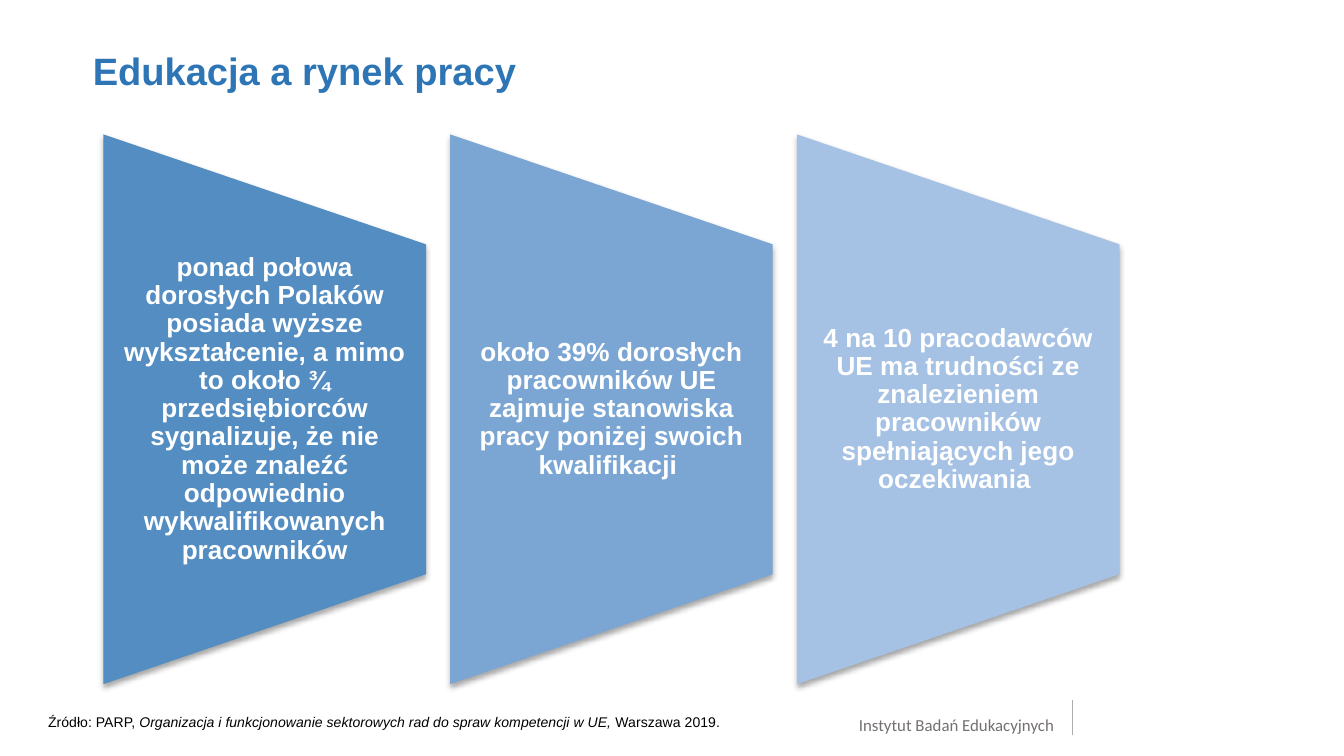
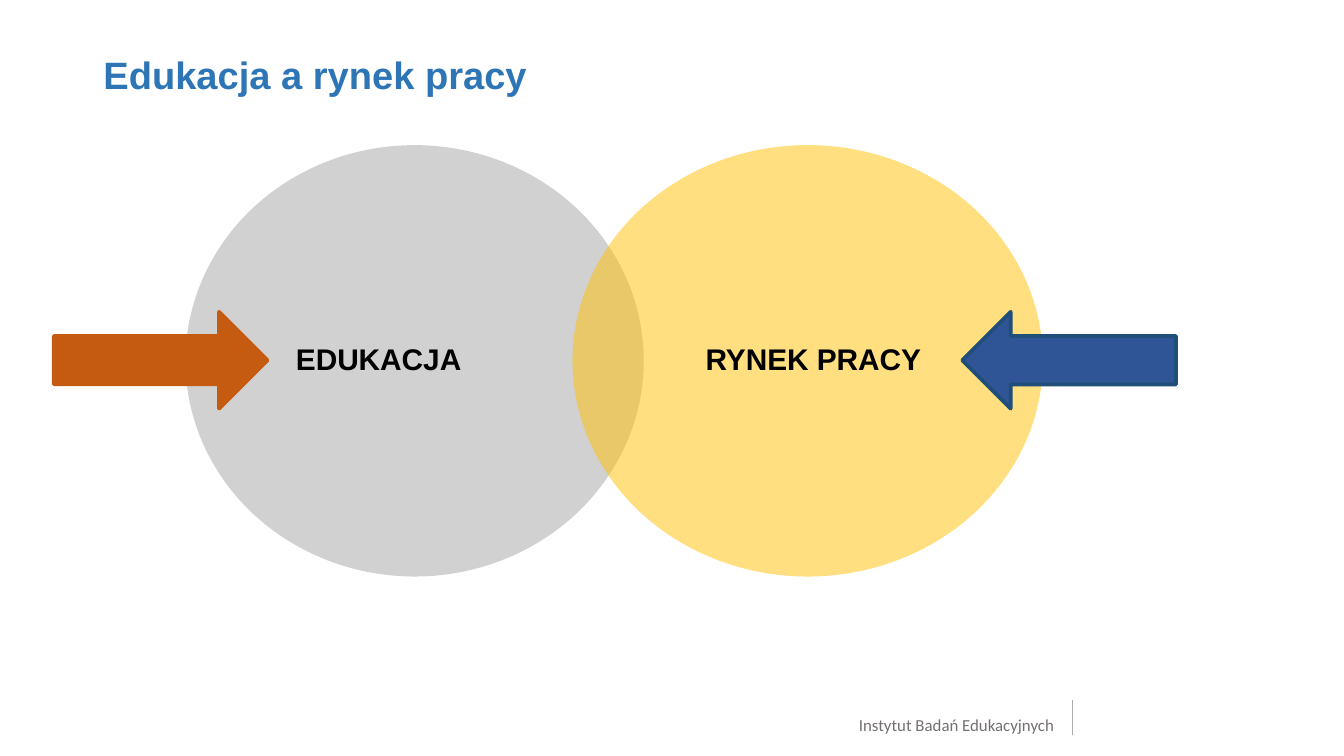
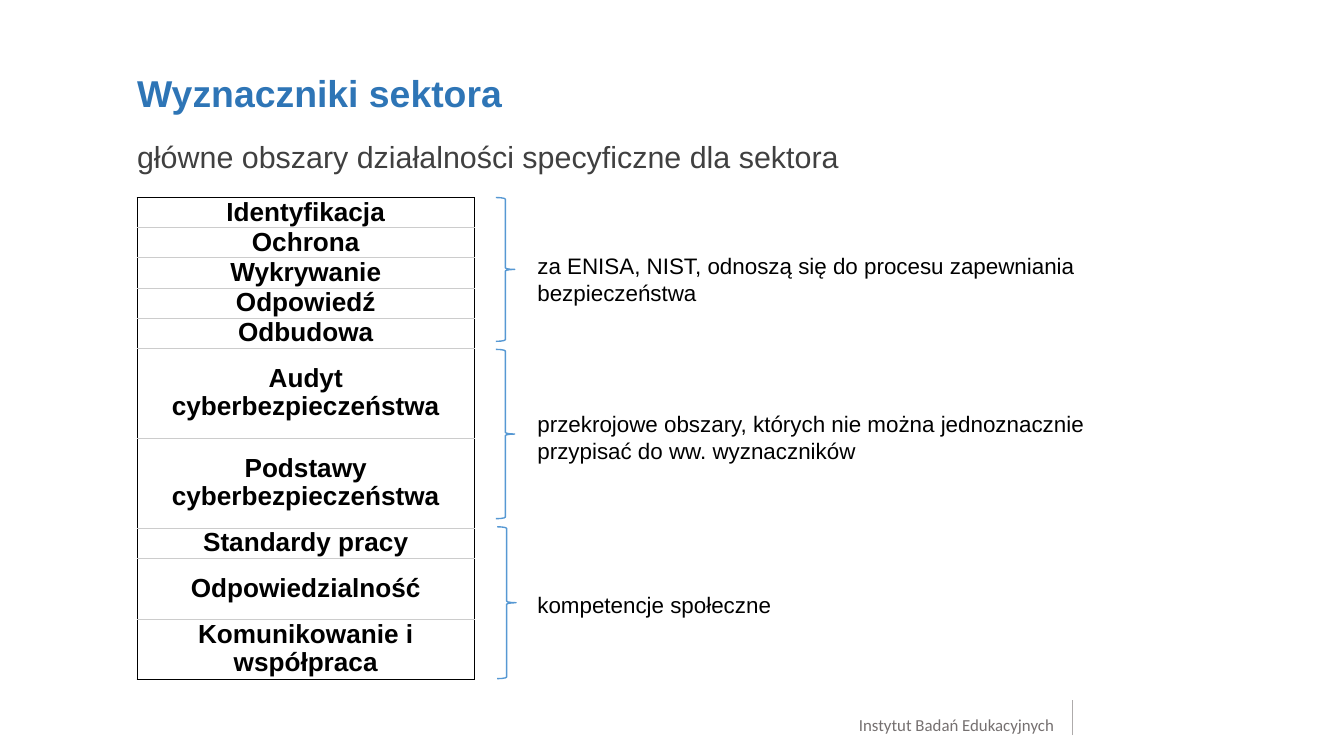
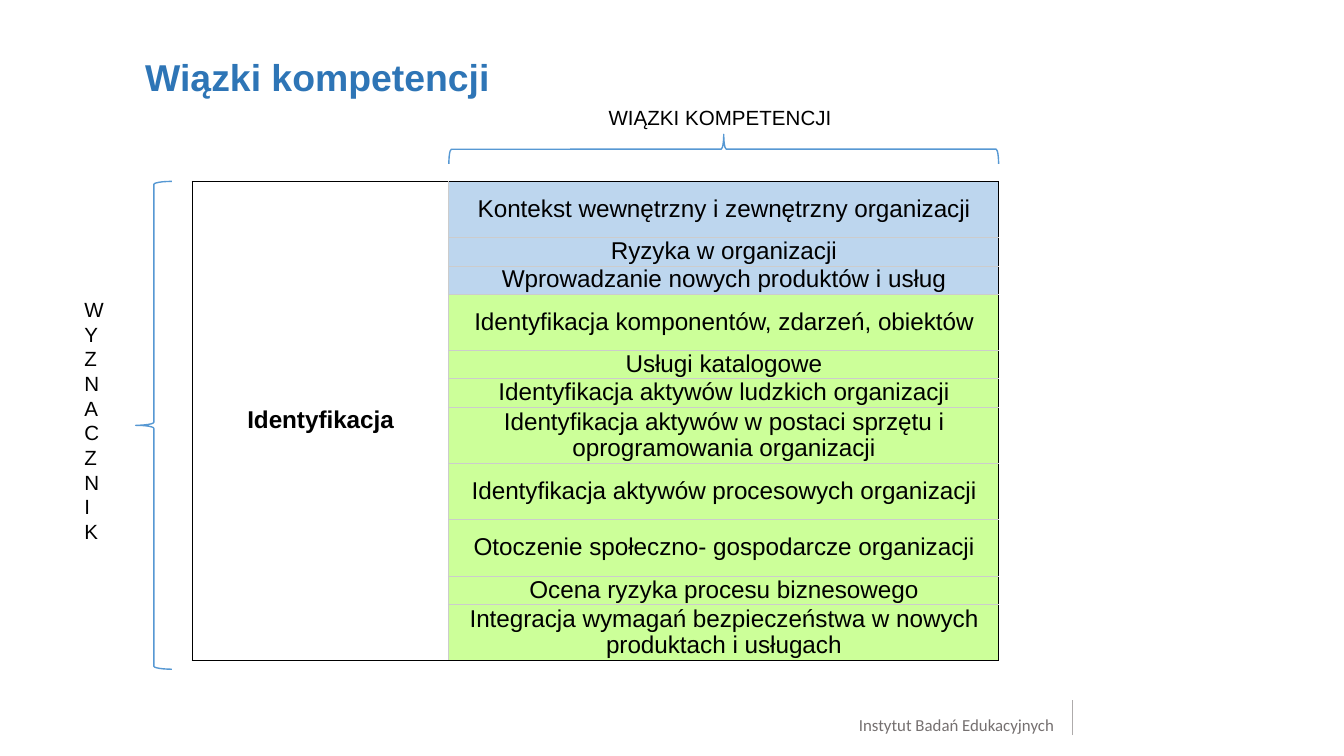
from dataclasses import dataclass

from lxml import etree
from pptx import Presentation
from pptx.dml.color import RGBColor
from pptx.enum.shapes import MSO_CONNECTOR, MSO_SHAPE
from pptx.enum.text import MSO_ANCHOR, PP_ALIGN
from pptx.oxml.ns import qn
from pptx.util import Inches, Pt


@dataclass(frozen=True)
class Theme:
    font: str = "Arial"
    footer_font: str = "Calibri"
    title: str = "2E75B6"
    subtitle: str = "404040"
    text: str = "000000"
    inverse: str = "FFFFFF"
    footer: str = "757070"
    footer_rule: str = "AEABAB"
    brace: str = "5698D3"
    grid: str = "CCCCCC"
    frame: str = "000000"
    panels: tuple = ("538DC1", "7BA6D3", "A5C1E3")
    education: str = "A5A5A5"
    labour: str = "FFC000"
    arrow_in: str = "C55A11"
    arrow_back: str = "2F5597"
    arrow_back_edge: str = "1F4E79"
    context_cell: str = "BDD6EE"
    asset_cell: str = "CCFF99"
    large_title: float = 20.4
    title_size: float = 20
    subtitle_size: float = 16.3
    circle_size: float = 16
    strong_size: float = 14
    cell_size: float = 13
    note_size: float = 12
    label_size: float = 11
    footer_size: float = 9
    source_size: float = 7.5


THEME = Theme()
NO_MARGINS = (0, 0, 0, 0)
TEXT_MARGINS = (0.1, 0.05, 0.1, 0.05)


def color(value):
    return RGBColor.from_string(value)


def add_element(parent, tag, **attributes):
    element = etree.SubElement(parent, qn(tag))
    for name, value in attributes.items():
        element.set(name, str(value))
    return element


# ---- Shared building blocks ----
def write_text(frame, content, size=THEME.note_size, fill=THEME.text, bold=False,
               font=THEME.font, align=PP_ALIGN.LEFT, spacing=1.0):
    """Write a string, or a list of (text, italic) runs, as one paragraph."""
    paragraph = frame.paragraphs[0]
    paragraph.alignment = align
    paragraph.line_spacing = spacing
    runs = [(content, False)] if isinstance(content, str) else content
    for text, italic in runs:
        run = paragraph.add_run()
        run.text = text
        run.font.name = font
        run.font.size = Pt(size)
        run.font.bold = bold
        run.font.italic = italic
        run.font.color.rgb = color(fill)


def add_text(slide, box, content, margins=TEXT_MARGINS, anchor=MSO_ANCHOR.TOP, **text_format):
    frame = slide.shapes.add_textbox(*map(Inches, box)).text_frame
    frame.word_wrap = True
    frame.vertical_anchor = anchor
    (frame.margin_left, frame.margin_top,
     frame.margin_right, frame.margin_bottom) = map(Inches, margins)
    write_text(frame, content, **text_format)
    return frame


def add_figure(slide, kind, box, fill=None, line=None, line_width=0.75, rotation=0):
    """Add a preset shape; box is the area covered after rotation."""
    left, top, width, height = box
    if rotation in (90, 270):
        left, top = left + (width - height) / 2, top + (height - width) / 2
        width, height = height, width
    shape = slide.shapes.add_shape(kind, *map(Inches, (left, top, width, height)))
    shape.rotation = rotation
    shape.shadow.inherit = False
    if fill:
        shape.fill.solid()
        shape.fill.fore_color.rgb = color(fill)
    else:
        shape.fill.background()
    if line:
        shape.line.color.rgb = color(line)
        shape.line.width = Pt(line_width)
    else:
        shape.line.fill.background()
    return shape


def add_drop_shadow(shape):
    effects = shape._element.spPr.find(qn("a:effectLst"))
    shadow = add_element(effects, "a:outerShdw", blurRad=Pt(3.1), dist=Pt(1.8),
                         dir=90 * 60000, rotWithShape=0)
    add_element(add_element(shadow, "a:srgbClr", val="000000"), "a:alpha", val=35000)


def make_translucent(shape, percent):
    solid = shape._element.spPr.find(qn("a:solidFill"))
    add_element(solid[0], "a:alpha", val=percent * 1000)


def add_title(slide, left, top, text, size=THEME.title_size, width=8.62):
    add_text(slide, (left, top, width, 0.58), text, margins=NO_MARGINS,
             size=size, fill=THEME.title, bold=True)


def add_footer(slide):
    add_text(slide, (6.17, 5.32, 1.67, 0.14), "Instytut Badań Edukacyjnych",
             margins=NO_MARGINS, size=THEME.footer_size, fill=THEME.footer,
             font=THEME.footer_font, align=PP_ALIGN.RIGHT)
    rule = slide.shapes.add_connector(
        MSO_CONNECTOR.STRAIGHT, *map(Inches, (7.98, 5.47, 7.98, 5.21)))
    rule.line.color.rgb = color(THEME.footer_rule)
    rule.line.width = Pt(0.75)
    add_element(rule._element.spPr, "a:effectLst")


def new_slide(presentation):
    slide = presentation.slides.add_slide(presentation.slide_layouts[6])
    add_footer(slide)
    return slide


# ---- Tables: dark outer frame, light inner grid ----
def add_grid(slide, left, top, column_widths, row_heights):
    rows, columns = len(row_heights), len(column_widths)
    box = (left, top, sum(column_widths), sum(row_heights))
    table = slide.shapes.add_table(rows, columns, *map(Inches, box)).table
    table.first_row = table.horz_banding = False
    for column, width in zip(table.columns, column_widths):
        column.width = Inches(width)
    for row, height in zip(table.rows, row_heights):
        row.height = Inches(height)
    return table


def border_cell(cell, left, right, top, bottom):
    properties = cell._tc.get_or_add_tcPr()
    sides = {"a:lnL": left, "a:lnR": right, "a:lnT": top, "a:lnB": bottom}
    for tag, is_outer in sides.items():
        line = add_element(properties, tag, w=Pt(0.6))
        add_element(add_element(line, "a:solidFill"), "a:srgbClr",
                    val=THEME.frame if is_outer else THEME.grid)


def finish_grid(table):
    rows, columns = len(table.rows), len(table.columns)
    for row in range(rows):
        for column in range(columns):
            cell = table.cell(row, column)
            last_row = row + (cell.span_height if cell.is_merge_origin else 1)
            border_cell(cell, column == 0, column == columns - 1,
                        row == 0, last_row == rows)
            cell.fill.background()


def write_cell(cell, text, fill=None, **text_format):
    cell.margin_left = cell.margin_right = Inches(0.02)
    cell.margin_top = cell.margin_bottom = 0
    cell.vertical_anchor = MSO_ANCHOR.MIDDLE
    if fill:
        cell.fill.solid()
        cell.fill.fore_color.rgb = color(fill)
    write_text(cell.text_frame, text, align=PP_ALIGN.CENTER, spacing=0.96, **text_format)


# ---- Slide 1: three fact panels ----
def add_fact_panel(slide, box, fill, text):
    left, top, width, height = box
    panel = add_figure(slide, MSO_SHAPE.FLOWCHART_MANUAL_OPERATION, box,
                       fill=fill, rotation=270)
    add_drop_shadow(panel)
    add_text(slide, (left, top + height * 0.2, width, height * 0.6), text,
             margins=(0.1, 0, 0.1, 0), anchor=MSO_ANCHOR.MIDDLE, bold=True,
             size=THEME.strong_size, fill=THEME.inverse,
             align=PP_ALIGN.CENTER, spacing=0.9)


def build_facts(presentation):
    slide = new_slide(presentation)
    add_title(slide, 0.69, 0.35, "Edukacja a rynek pracy", THEME.large_title)
    facts = (
        "ponad połowa dorosłych Polaków posiada wyższe wykształcenie, a mimo to około ¾ "
        "przedsiębiorców sygnalizuje, że nie może znaleźć odpowiednio "
        "wykwalifikowanych pracowników",
        "około 39% dorosłych pracowników UE zajmuje stanowiska pracy poniżej "
        "swoich kwalifikacji ",
        "4 na 10 pracodawców UE ma trudności ze znalezieniem pracowników "
        "spełniających jego oczekiwania ",
    )
    for index, (fill, fact) in enumerate(zip(THEME.panels, facts)):
        add_fact_panel(slide, (0.77 + 2.58 * index, 1, 2.4, 4.09), fill, fact)
    source = [
        ("Źródło: PARP, ", False),
        ("Organizacja i funkcjonowanie sektorowych rad do spraw kompetencji w UE, ", True),
        ("Warszawa 2019.", False),
    ]
    add_text(slide, (0.26, 5.26, 7.17, 0.23), source, size=THEME.source_size)


# ---- Slide 2: overlapping circles with arrows ----
def add_circle(slide, box, fill, label, label_left, label_width, align):
    left, top, width, height = box
    make_translucent(add_figure(slide, MSO_SHAPE.OVAL, box, fill=fill), 50)
    add_text(slide, (left + label_left, top + 0.38, label_width, height - 0.76), label,
             margins=NO_MARGINS, anchor=MSO_ANCHOR.MIDDLE, size=THEME.circle_size,
             bold=True, align=align, spacing=0.9)


def build_overlap(presentation):
    slide = new_slide(presentation)
    add_title(slide, 0.77, 0.38, "Edukacja a rynek pracy", THEME.large_title, width=6.86)
    add_circle(slide, (1.38, 1.08, 3.41, 3.21), THEME.education, "EDUKACJA ",
               0.48, 1.97, PP_ALIGN.CENTER)
    add_circle(slide, (4.26, 1.08, 3.5, 3.21), THEME.labour, "RYNEK PRACY",
               0.99, 2.02, PP_ALIGN.LEFT)
    arrows = ((0.4, THEME.arrow_in, THEME.arrow_in, 0),
              (7.16, THEME.arrow_back, THEME.arrow_back_edge, 180))
    for left, fill, line, rotation in arrows:
        add_figure(slide, MSO_SHAPE.RIGHT_ARROW, (left, 2.32, 1.59, 0.72),
                   fill=fill, line=line, line_width=2, rotation=rotation)


# ---- Slide 3: sector determinants ----
def add_determinants(slide, left, top):
    determinants = (
        ("Identyfikacja", 0.22), ("Ochrona", 0.22), ("Wykrywanie", 0.22),
        ("Odpowiedź", 0.22), ("Odbudowa", 0.22),
        ("Audyt cyberbezpieczeństwa", 0.67), ("Podstawy cyberbezpieczeństwa", 0.67),
        ("Standardy pracy", 0.22), ("Odpowiedzialność", 0.45),
        ("Komunikowanie i współpraca", 0.45),
    )
    table = add_grid(slide, left, top, [2.51], [height for _, height in determinants])
    finish_grid(table)
    for row, (name, _) in enumerate(determinants):
        write_cell(table.cell(row, 0), name, size=THEME.strong_size, bold=True)


def build_determinants(presentation):
    slide = new_slide(presentation)
    add_text(slide, (1.02, 1.03, 5.33, 0.38),
             "główne obszary działalności specyficzne dla sektora",
             margins=NO_MARGINS, size=THEME.subtitle_size, fill=THEME.subtitle)
    add_title(slide, 1.02, 0.52, "Wyznaczniki sektora")
    add_determinants(slide, 1.02, 1.47)
    # Braces: left, top, height, then note top, height and wording
    groups = (
        (3.69, 1.47, 1.07, 1.83, 0.5,
         "za ENISA, NIST, odnoszą się do procesu zapewniania bezpieczeństwa"),
        (3.69, 2.6, 1.26, 3, 0.5,
         "przekrojowe obszary, których nie można jednoznacznie przypisać "
         "do ww. wyznaczników"),
        (3.7, 3.92, 1.13, 4.35, 0.3, "kompetencje społeczne"),
    )
    for left, top, height, note_top, note_height, note in groups:
        add_figure(slide, MSO_SHAPE.RIGHT_BRACE, (left, top, 0.14, height),
                   line=THEME.brace)
        add_text(slide, (3.9, note_top, 4.28, note_height), note)


# ---- Slide 4: competence bundles ----
def add_bundles(slide, left, top):
    bundles = (
        ("Kontekst wewnętrzny i zewnętrzny organizacji", 0.42),
        ("Ryzyka w organizacji", 0.21),
        ("Wprowadzanie nowych produktów i usług", 0.21),
        ("Identyfikacja komponentów, zdarzeń, obiektów", 0.42),
        ("Usługi katalogowe", 0.21),
        ("Identyfikacja aktywów ludzkich organizacji", 0.21),
        ("Identyfikacja aktywów w postaci sprzętu i oprogramowania organizacji", 0.42),
        ("Identyfikacja aktywów procesowych organizacji", 0.42),
        ("Otoczenie społeczno- gospodarcze organizacji", 0.42),
        ("Ocena ryzyka procesu biznesowego", 0.21),
        ("Integracja wymagań bezpieczeństwa w nowych produktach i usługach", 0.42),
    )
    table = add_grid(slide, left, top, [1.91, 4.09], [height for _, height in bundles])
    table.cell(0, 0).merge(table.cell(len(bundles) - 1, 0))
    finish_grid(table)
    write_cell(table.cell(0, 0), "Identyfikacja", size=THEME.cell_size, bold=True)
    for row, (name, _) in enumerate(bundles):
        fill = THEME.context_cell if row < 3 else THEME.asset_cell
        write_cell(table.cell(row, 1), name, fill=fill, size=THEME.cell_size)


def build_bundles(presentation):
    slide = new_slide(presentation)
    add_title(slide, 1.08, 0.4, "Wiązki kompetencji")
    add_bundles(slide, 1.43, 1.35)
    # Braces and their labels
    add_figure(slide, MSO_SHAPE.LEFT_BRACE, (1.01, 1.35, 0.27, 3.63), line=THEME.brace)
    frame = add_text(slide, (0.53, 2.16, 0.4, 2.68), "WYZNACZNIK", size=THEME.label_size)
    frame._txBody.bodyPr.set("vert", "wordArtVert")
    add_figure(slide, MSO_SHAPE.LEFT_BRACE, (3.34, 1, 4.09, 0.22),
               line=THEME.brace, rotation=90)
    add_text(slide, (4.43, 0.73, 2.54, 0.29), "WIĄZKI KOMPETENCJI", size=THEME.label_size)


def main():
    presentation = Presentation()
    presentation.slide_width = Inches(10)
    presentation.slide_height = Inches(10) * 9 // 16
    for build in (build_facts, build_overlap, build_determinants, build_bundles):
        build(presentation)
    presentation.save("out.pptx")


if __name__ == "__main__":
    main()
